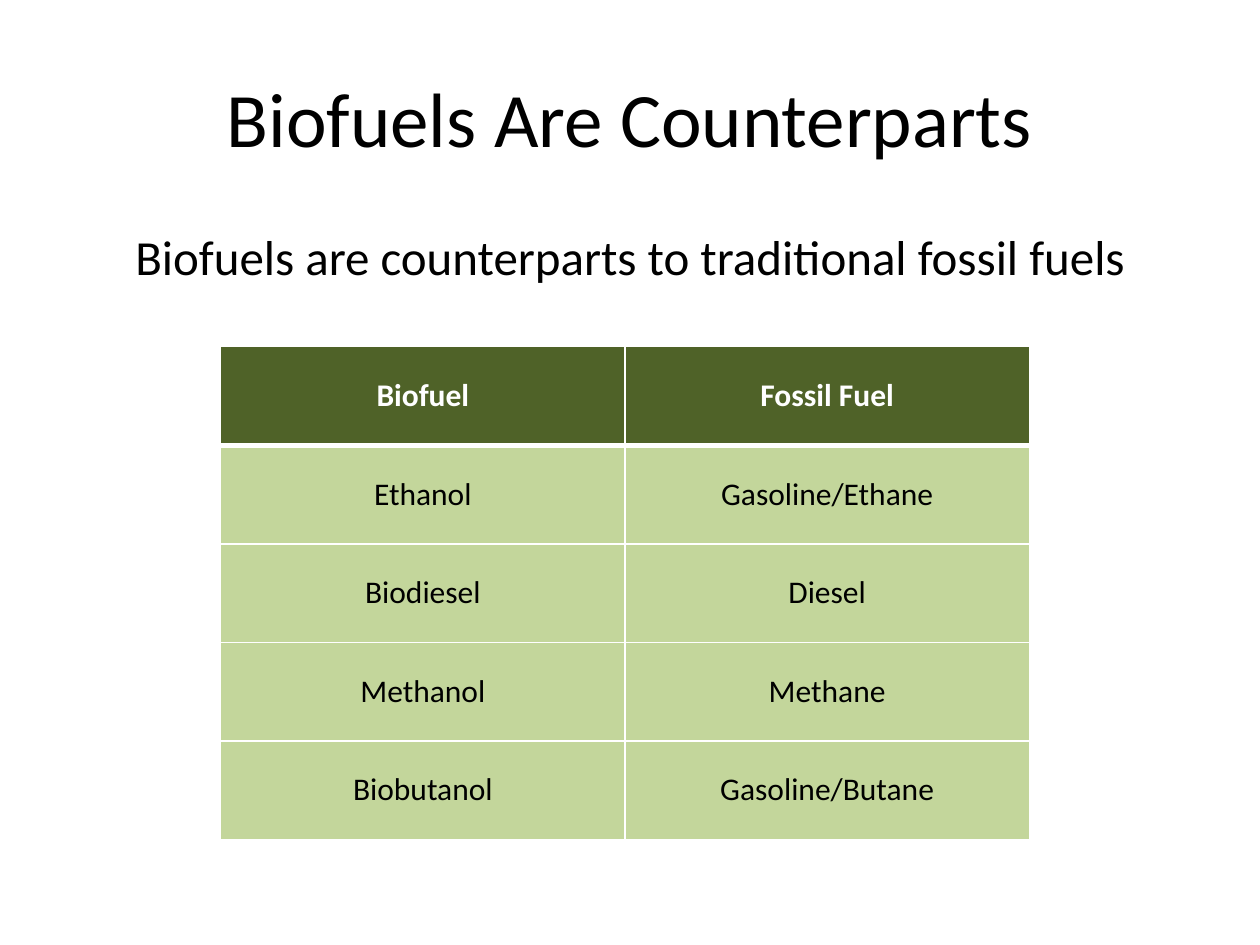
import lxml.etree
import pptx
import pptx.dml.color
import pptx.enum.text
import pptx.oxml.ns
import pptx.util

Cm = pptx.util.Cm
CENTER = pptx.enum.text.PP_ALIGN.CENTER
MIDDLE = pptx.enum.text.MSO_ANCHOR.MIDDLE

FUELS = [
    ("Biofuel", "Fossil Fuel"),
    ("Ethanol", "Gasoline/Ethane"),
    ("Biodiesel", "Diesel"),
    ("Methanol", "Methane"),
    ("Biobutanol", "Gasoline/Butane"),
]


def rgb(color):
    return pptx.dml.color.RGBColor.from_string(color)


def write(frame, text, size, color="000000", bold=False):
    frame.text = text
    frame.word_wrap = True
    paragraph = frame.paragraphs[0]
    paragraph.alignment = CENTER
    font = paragraph.font
    font.name, font.size, font.bold = "Calibri", pptx.util.Pt(size), bold
    font.color.rgb = rgb(color)


def add_title(slide, left, top, width, height):
    title = slide.shapes.title
    title.left, title.top, title.width, title.height = left, top, width, height
    write(title.text_frame, "Biofuels Are Counterparts", 44)
    title.text_frame.vertical_anchor = MIDDLE


def add_statement(slide, left, top, width, height):
    statement = slide.shapes.add_textbox(left, top, width, height)
    write(statement.text_frame,
          "Biofuels are counterparts to traditional fossil fuels", 28)


def set_borders(cell, color, **widths):
    """Draw cell borders; widths in points, keyed by side in the order L, R, T, B."""
    qn = pptx.oxml.ns.qn
    properties = cell._tc.get_or_add_tcPr()
    for side, width in widths.items():
        line = lxml.etree.SubElement(properties, qn(f"a:ln{side}"),
                                     w=str(pptx.util.Pt(width)))
        fill = lxml.etree.SubElement(line, qn("a:solidFill"))
        lxml.etree.SubElement(fill, qn("a:srgbClr"), val=color)


def add_fuel_table(slide, left, top, width, height):
    table = slide.shapes.add_table(len(FUELS), len(FUELS[0]),
                                   left, top, width, height).table
    table.horz_banding = False
    for row, names in enumerate(FUELS):
        header = row == 0
        for column, name in enumerate(names):
            cell = table.cell(row, column)
            # The rule under the header is shared by the first two rows
            set_borders(cell, "FFFFFF", L=1, R=1,
                        T=3 if row == 1 else 1, B=3 if header else 1)
            cell.fill.solid()
            cell.fill.fore_color.rgb = rgb("4F6228" if header else "C3D69B")
            cell.vertical_anchor = MIDDLE
            write(cell.text_frame, name, 18,
                  "FFFFFF" if header else "000000", bold=header)


def main():
    presentation = pptx.Presentation()
    presentation.slide_width, presentation.slide_height = Cm(25.4), Cm(19.05)
    title_only = presentation.slide_layouts[5]
    slide = presentation.slides.add_slide(title_only)

    add_title(slide, Cm(1.27), Cm(0.76), Cm(22.86), Cm(3.18))
    add_statement(slide, Cm(1.27), Cm(4.45), Cm(22.86), Cm(12.57))
    add_fuel_table(slide, Cm(4.45), Cm(6.99), Cm(16.3), Cm(9.93))

    presentation.save("out.pptx")


if __name__ == "__main__":
    main()
